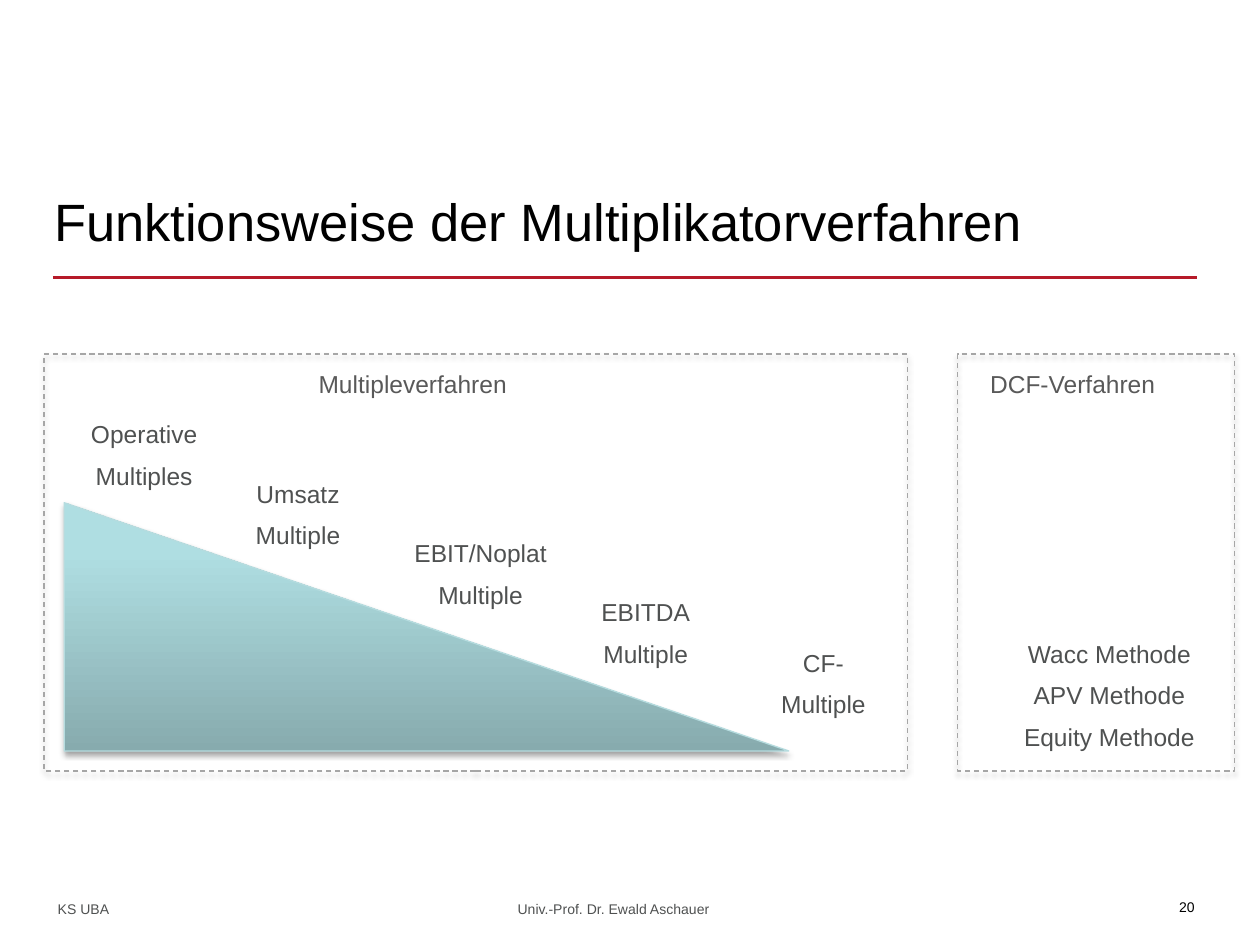
from lxml import etree
from pptx import Presentation
from pptx.dml.color import RGBColor
from pptx.enum.dml import MSO_LINE
from pptx.enum.shapes import MSO_CONNECTOR, MSO_SHAPE
from pptx.enum.text import MSO_ANCHOR, MSO_AUTO_SIZE, PP_ALIGN
from pptx.oxml import parse_xml
from pptx.oxml.ns import nsdecls, qn
from pptx.util import Inches, Pt

LEFT, CENTER, RIGHT = PP_ALIGN.LEFT, PP_ALIGN.CENTER, PP_ALIGN.RIGHT

THEME = {
    "font": "Arial",
    "black": "000000", "body": "4F5151", "heading": "595959",
    "rule": "B61A29", "frame": "A6A6A6", "wedge_edge": "B6DCDF",
    "wedge": [(0, "87ABAE"), (80, "AFDEE2"), (100, "AFE0E4")],
    "title_size": 30, "body_size": 14, "small_size": 8,
    "paragraph_gap": 7,
}

TITLE = "Funktionsweise der Multiplikatorverfahren"
FOOTER = "KS UBA\tUniv.-Prof. Dr. Ewald Aschauer"
FOOTER_TAB = 3.65
PAGE_NUMBER = "20"

# Boxes are left, top, width, height in inches
FRAMES = [(0.35, 2.81, 6.85, 3.31), (7.6, 2.81, 2.2, 3.31)]
WEDGE = (0.51, 3.99, 5.75, 1.97)
HEADINGS = [
    ("Multipleverfahren", (2.43, 2.88, 2.41, 0.4)),
    ("DCF-Verfahren", (7.76, 2.88, 2.06, 0.4)),
]
LABELS = [
    (["Operative", "Multiples"], (0.43, 3.28, 1.43, 0.71)),
    (["Umsatz", "Multiple"], (1.77, 3.75, 1.19, 0.71)),
    (["EBIT/Noplat", "Multiple"], (2.95, 4.22, 1.73, 0.71)),
    (["EBITDA", "Multiple"], (4.53, 4.69, 1.19, 0.71)),
    (["CF-", "Multiple"], (5.94, 5.09, 1.19, 0.71)),
    (["Wacc Methode", "APV Methode", "Equity Methode"], (7.72, 5.02, 2.17, 1.01)),
]


def color(name):
    return RGBColor.from_string(THEME[name])


def inches(values):
    return [Inches(value) for value in values]


def write(frame, lines, size="body_size", ink="body", align=LEFT, tab=None):
    for index, line in enumerate(lines):
        para = frame.paragraphs[0] if index == 0 else frame.add_paragraph()
        para.alignment = align
        if index:
            para.space_before = Pt(THEME["paragraph_gap"])
        if tab:
            tabs = etree.SubElement(para._p.get_or_add_pPr(), qn("a:tabLst"))
            etree.SubElement(tabs, qn("a:tab"), pos=str(Inches(tab)), algn="l")
        span = para.add_run()
        span.text = line
        span.font.name = THEME["font"]
        span.font.size = Pt(THEME[size])
        span.font.color.rgb = color(ink)


def add_text(page, lines, place, **style):
    frame = page.shapes.add_textbox(*inches(place)).text_frame
    frame.word_wrap = True
    write(frame, lines, **style)


def add_shadowed(page, kind, place, line):
    """Add an unfilled shape with a thin outline and a soft shadow below."""
    shape = page.shapes.add_shape(kind, *inches(place))
    shape.fill.background()
    shape.line.color.rgb = color(line)
    shape.line.width = Pt(0.75)
    shape._element.spPr.append(parse_xml(
        f'<a:effectLst {nsdecls("a")}><a:outerShdw blurRad="{Pt(3.1)}" dist="{Pt(1.8)}" '
        'dir="5400000" rotWithShape="0"><a:srgbClr val="000000"><a:alpha val="35000"/>'
        '</a:srgbClr></a:outerShdw></a:effectLst>'))
    return shape


def fill_upward(shape, stops):
    """Fill with a gradient that runs from bottom to top."""
    marks = "".join(f'<a:gs pos="{share * 1000}"><a:srgbClr val="{value}"/></a:gs>'
                    for share, value in stops)
    properties = shape._element.spPr
    properties.replace(properties.find(qn("a:noFill")), parse_xml(
        f'<a:gradFill {nsdecls("a")} rotWithShape="1"><a:gsLst>{marks}</a:gsLst>'
        '<a:lin ang="16200000" scaled="0"/></a:gradFill>'))


def add_title(page):
    title = page.shapes.title
    title.left, title.top, title.width, title.height = inches((0.33, 1.33, 9.23, 0.84))
    frame = title.text_frame
    frame.auto_size = MSO_AUTO_SIZE.NONE
    frame.vertical_anchor = MSO_ANCHOR.MIDDLE
    write(frame, [TITLE], size="title_size", ink="black")

    rule = page.shapes.add_connector(MSO_CONNECTOR.STRAIGHT, *inches((0.42, 2.2, 9.5, 2.2)))
    rule.line.color.rgb = color("rule")
    rule.line.width = Pt(1.75)
    etree.SubElement(rule._element.spPr, qn("a:effectLst"))


def main():
    deck = Presentation()
    deck.slide_width, deck.slide_height = inches((10, 7.5))
    page = deck.slides.add_slide(deck.slide_layouts[5])
    add_title(page)
    add_text(page, [PAGE_NUMBER], (8.25, 7.08, 1.33, 0.23),
             size="small_size", ink="black", align=RIGHT)
    add_text(page, [FOOTER], (0.36, 7.1, 6.28, 0.23), size="small_size", tab=FOOTER_TAB)

    for place in FRAMES:
        frame = add_shadowed(page, MSO_SHAPE.RECTANGLE, place, "frame")
        frame.line.dash_style = MSO_LINE.DASH
    wedge = add_shadowed(page, MSO_SHAPE.RIGHT_TRIANGLE, WEDGE, "wedge_edge")
    fill_upward(wedge, THEME["wedge"])

    for lines, place in LABELS:
        add_text(page, lines, place, align=CENTER)
    for heading, place in HEADINGS:
        add_text(page, [heading], place, ink="heading")
    deck.save("out.pptx")


if __name__ == "__main__":
    main()
